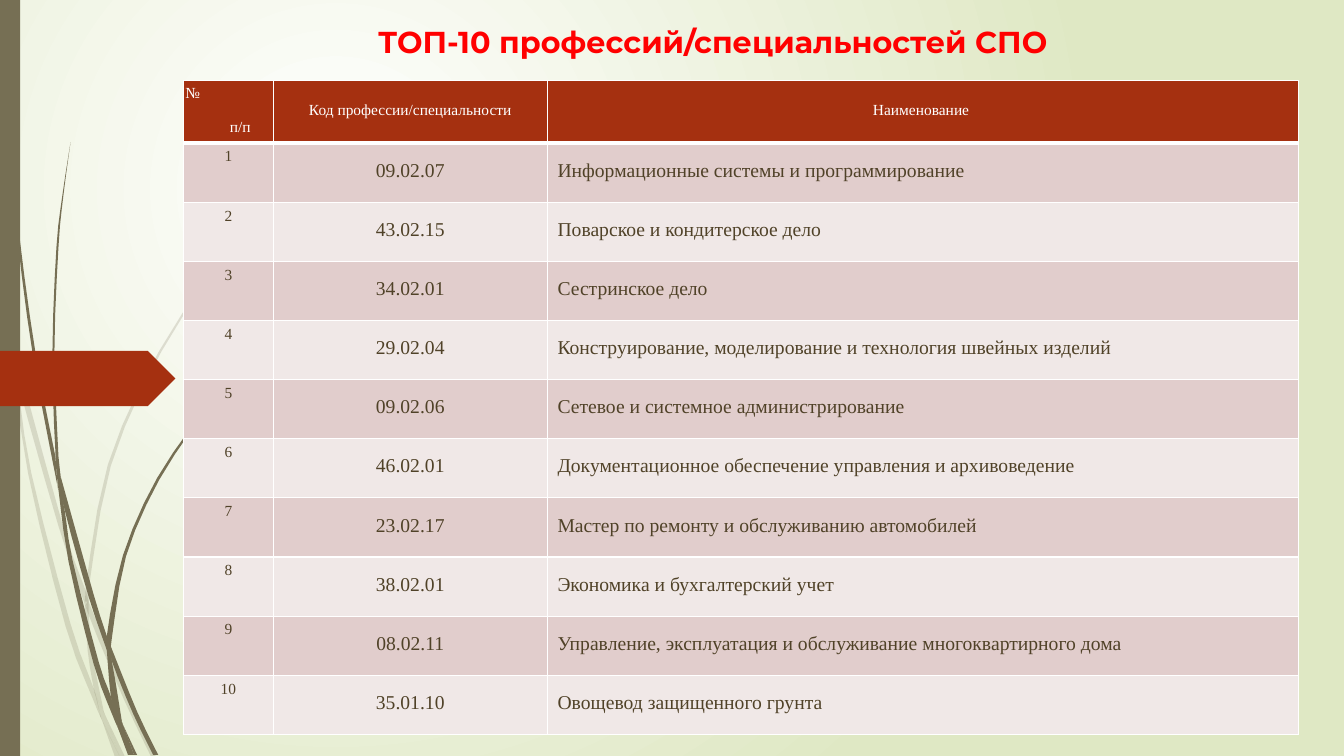
import pptx
import pptx.util
import pptx.dml.color
import pptx.enum.shapes
import pptx.enum.text
import pptx.oxml.ns
from dataclasses import dataclass
from lxml import etree

Inches, Pt = pptx.util.Inches, pptx.util.Pt
RGB = pptx.dml.color.RGBColor.from_string
SHAPE = pptx.enum.shapes.MSO_SHAPE
ALIGN = pptx.enum.text.PP_ALIGN
ANCHOR = pptx.enum.text.MSO_ANCHOR
qn = pptx.oxml.ns.qn


@dataclass(frozen=True)
class Theme:
    white: str = "FFFFFF"
    backdrop: str = "DFE8C4"
    grass: str = "766F54"
    rust: str = "A53010"
    title: str = "FF0000"
    ink: str = "504228"
    bands: tuple = ("E1CDCC", "F0E8E7")
    title_font: str = "Montserrat"
    table_font: str = "Times New Roman"
    title_size: float = 21.6
    small_size: int = 11
    body_size: int = 14


theme = Theme()


def smooth(points, steps=3):
    """Points of a Catmull-Rom curve running through the given points."""
    ends = [points[0], *points, points[-1]]
    curve = [points[0]]
    for a, b, c, d in zip(ends, ends[1:], ends[2:], ends[3:]):
        for step in range(1, steps + 1):
            t = step / steps
            curve.append(tuple(
                (2 * q + (r - p) * t + (2 * p - 5 * q + 4 * r - s) * t**2
                 + (3 * q - p - 3 * r + s) * t**3) / 2
                for p, q, r, s in zip(a, b, c, d)))
    return curve


def paint(shape, color):
    shape.fill.solid()
    shape.fill.fore_color.rgb = RGB(color)
    shape.line.fill.background()
    shape.shadow.inherit = False


prs = pptx.Presentation()
prs.slide_width, prs.slide_height = Inches(13.33), Inches(7.5)
slide = prs.slides.add_slide(prs.slide_layouts[6])

# Background: radial gradient, white in the upper left
backdrop = slide.background.fill
backdrop.gradient()
for stop, color, position in zip(backdrop.gradient_stops, (theme.white, theme.backdrop), (0, 1)):
    stop.color.rgb = RGB(color)
    stop.position = position
gradient = slide.background._cSld.find(".//" + qn("a:gradFill"))
radial = etree.Element(qn("a:path"), path="circle")
etree.SubElement(radial, qn("a:fillToRect"), l="50000", t="50000", r="100000", b="100000")
gradient.replace(gradient.find(qn("a:lin")), radial)

# Grass: each blade segment is one edge going down and one coming back up
pale_grass = [
    ([(0, 2.82), (0, 2.99), (0.1, 3.44), (0.11, 3.5)], [(0.09, 3.22), (0, 2.82)]),
    ([(0.14, 3.45), (0.17, 3.76), (0.58, 5.22), (0.84, 5.99)],
     [(0.85, 5.86), (0.62, 5.2), (0.14, 3.45)]),
    ([(0.88, 5.96), (0.88, 6.1), (1.23, 6.94), (1.5, 7.51)],
     [(1.55, 7.51), (1.27, 6.92), (0.92, 6.07), (0.88, 5.96)]),
    ([(1.05, 7.11), (1.19, 7.51)], [(1.24, 7.51), (1.05, 7.11)]),
    ([(0.11, 3.5), (0.28, 4.7), (0.65, 6.21), (0.92, 6.93), (1.01, 7.14)],
     [(0.99, 7.07), (0.93, 6.83), (0.7, 6.19), (0.31, 4.69), (0.17, 3.76), (0.11, 3.5)]),
    ([(0.84, 5.99), (0.87, 6.46), (0.93, 6.83), (0.96, 6.92), (1.05, 7.11)],
     [(1.03, 7.06), (0.91, 6.46), (0.88, 6.1), (0.84, 5.99)]),
    ([(3.12, 1.53), (2.89, 1.75), (2.68, 1.97), (2.28, 2.44), (1.58, 3.48), (1.07, 4.61),
      (0.85, 5.84), (0.88, 5.96)],
     [(0.88, 5.84), (1.1, 4.62), (1.6, 3.49), (2.29, 2.45), (2.68, 1.98), (2.9, 1.75), (3.12, 1.54)]),
    ([(1.01, 7.14), (1.14, 7.51)], [(1.19, 7.51), (1.01, 7.14)]),
    ([(0.85, 5.86), (0.84, 5.99)], [(0.88, 6.1), (0.88, 5.96)]),
    ([(0.93, 6.83), (0.99, 7.07), (1.01, 7.14), (1.19, 7.51)],
     [(1.05, 7.11), (0.96, 6.92), (0.93, 6.83)]),
]
dark_grass = [
    ([(0.03, 0), (0.04, 0.48), (0.07, 1.1), (0.17, 2.33), (0.33, 3.55), (0.56, 4.77), (0.57, 4.81)],
     [(0.55, 4.53), (0.36, 3.55), (0.19, 2.32), (0.08, 1.09), (0.05, 0.48), (0.04, 0)]),
    ([(0.6, 4.72), (0.64, 5.05), (0.88, 5.92), (1.06, 6.45)],
     [(1.06, 6.31), (0.93, 5.9), (0.6, 4.72)]),
    ([(1.1, 6.41), (1.11, 6.56), (1.32, 7.08), (1.52, 7.49)],
     [(1.57, 7.49), (1.36, 7.06), (1.13, 6.49), (1.1, 6.41)]),
    ([(0.57, 4.77), (0.68, 5.57), (0.93, 6.59), (1.11, 7.08), (1.17, 7.22)],
     [(1.16, 7.17), (1.1, 6.91), (0.98, 6.57), (0.72, 5.56), (0.64, 5.05), (0.57, 4.77)]),
    ([(0.7, 1.41), (0.62, 1.93), (0.56, 2.45), (0.52, 3.49), (0.55, 4.49), (0.6, 4.72)],
     [(0.58, 4.53), (0.54, 3.49), (0.58, 2.45), (0.63, 1.93), (0.7, 1.41)]),
    ([(1.22, 7.19), (1.33, 7.49)], [(1.36, 7.49), (1.22, 7.19)]),
    ([(0.55, 4.49), (0.57, 4.77), (0.64, 5.05)], [(0.6, 4.72), (0.55, 4.49)]),
    ([(2.6, 3.44), (2.31, 3.73), (2.04, 4.05), (1.56, 4.74), (1.22, 5.51), (1.06, 6.31), (1.1, 6.41)],
     [(1.11, 6.33), (1.25, 5.52), (1.58, 4.76), (2.05, 4.06), (2.31, 3.74), (2.6, 3.44)]),
    ([(1.17, 7.22), (1.27, 7.49)], [(1.31, 7.49), (1.17, 7.22)]),
    ([(1.06, 6.45), (1.1, 6.91), (1.16, 7.06), (1.22, 7.19)],
     [(1.21, 7.16), (1.11, 6.56), (1.06, 6.45)]),
    ([(1.06, 6.31), (1.06, 6.45), (1.11, 6.56)], [(1.1, 6.41), (1.06, 6.31)]),
    ([(1.1, 6.91), (1.17, 7.22), (1.3, 7.49)], [(1.33, 7.49), (1.22, 7.19), (1.1, 6.91)]),
]
for opacity, segments in ((20, pale_grass), (100, dark_grass)):
    for down_edge, up_edge in segments:
        outline = [(Inches(x), Inches(y)) for x, y in smooth(down_edge) + smooth(up_edge)]
        builder = slide.shapes.build_freeform(*outline[0])
        builder.add_line_segments(outline[1:], close=True)
        blade = builder.convert_to_shape()
        paint(blade, theme.grass)
        if opacity < 100:
            blade_color = blade._element.spPr.find(qn("a:solidFill"))[0]
            etree.SubElement(blade_color, qn("a:alpha"), val=str(opacity * 1000))

# Side bar and pointer
side_bar = slide.shapes.add_shape(SHAPE.RECTANGLE, 0, 0, Inches(0.2), Inches(7.5))
paint(side_bar, theme.grass)
pointer = slide.shapes.add_shape(SHAPE.PENTAGON, 0, Inches(3.48), Inches(1.74), Inches(0.55))
paint(pointer, theme.rust)

# Title
title = slide.shapes.add_textbox(Inches(3.07), Inches(0.05), Inches(8), Inches(0.59)).text_frame
title.word_wrap = True
title.vertical_anchor = ANCHOR.BOTTOM
title.text = "ТОП-10 профессий/специальностей СПО"
title.paragraphs[0].alignment = ALIGN.CENTER
title_font = title.paragraphs[0].runs[0].font
title_font.name, title_font.size, title_font.bold = theme.title_font, Pt(theme.title_size), True
title_font.color.rgb = RGB(theme.title)

# Table of professions
professions = [
    ("09.02.07", "Информационные системы и программирование"),
    ("43.02.15", "Поварское и кондитерское дело"),
    ("34.02.01", "Сестринское дело"),
    ("29.02.04", "Конструирование, моделирование и технология швейных изделий"),
    ("09.02.06", "Сетевое и системное администрирование"),
    ("46.02.01", "Документационное обеспечение управления и архивоведение"),
    ("23.02.17", "Мастер по ремонту и обслуживанию автомобилей"),
    ("38.02.01", "Экономика и бухгалтерский учет"),
    ("08.02.11", "Управление, эксплуатация и обслуживание многоквартирного дома"),
    ("35.01.10", "Овощевод защищенного грунта"),
]
rows = [("№\nп/п", "Код профессии/специальности", "Наименование ")]
rows += [(str(number), *profession) for number, profession in enumerate(professions, 1)]
column_widths = (0.89, 2.72, 7.45)
header_height, table_height = 0.62, 6.49

table = slide.shapes.add_table(len(rows), len(column_widths), Inches(1.82), Inches(0.8),
                               Inches(sum(column_widths)), Inches(table_height)).table
for column, width in zip(table.columns, column_widths):
    column.width = Inches(width)
for r, row in enumerate(rows):
    header = r == 0
    table.rows[r].height = Inches(
        header_height if header else (table_height - header_height) / len(professions))
    for c, text in enumerate(row):
        cell = table.cell(r, c)
        cell.text_frame.text = text
        cell.fill.solid()
        cell.fill.fore_color.rgb = RGB(theme.rust if header else theme.bands[(r - 1) % 2])
        if header or c > 0:
            cell.vertical_anchor = ANCHOR.MIDDLE
            cell.margin_left = Inches(0.01 if header or c == 1 else 0.1)
            cell.margin_top = cell.margin_right = Inches(0.01)
            cell.margin_bottom = Inches(0.05)
        for paragraph in cell.text_frame.paragraphs:
            paragraph.alignment = ALIGN.CENTER if header or c < 2 else ALIGN.LEFT
            font = paragraph.runs[0].font
            font.name, font.bold = theme.table_font, False
            font.size = Pt(theme.small_size if header or c == 0 else theme.body_size)
            font.color.rgb = RGB(theme.white if header else theme.ink)
        # Cell borders, thicker under the header
        for place, side in enumerate(("L", "R", "T", "B")):
            thick = (header and side == "B") or (r == 1 and side == "T")
            border = etree.Element(qn("a:ln" + side), w=str(Pt(3 if thick else 1)))
            border_fill = etree.SubElement(border, qn("a:solidFill"))
            etree.SubElement(border_fill, qn("a:srgbClr"), val=theme.white)
            cell._tc.get_or_add_tcPr().insert(place, border)

# Number heading: the sign at the left, the abbreviation lower and indented
number_heading = table.cell(0, 0)
number_heading.margin_left = Inches(0.02)
number_sign, number_label = number_heading.text_frame.paragraphs
number_sign.alignment = number_label.alignment = ALIGN.LEFT
number_label.space_before = Pt(12)
number_label._p.get_or_add_pPr().set("marL", str(Inches(0.44)))

prs.save("out.pptx")
